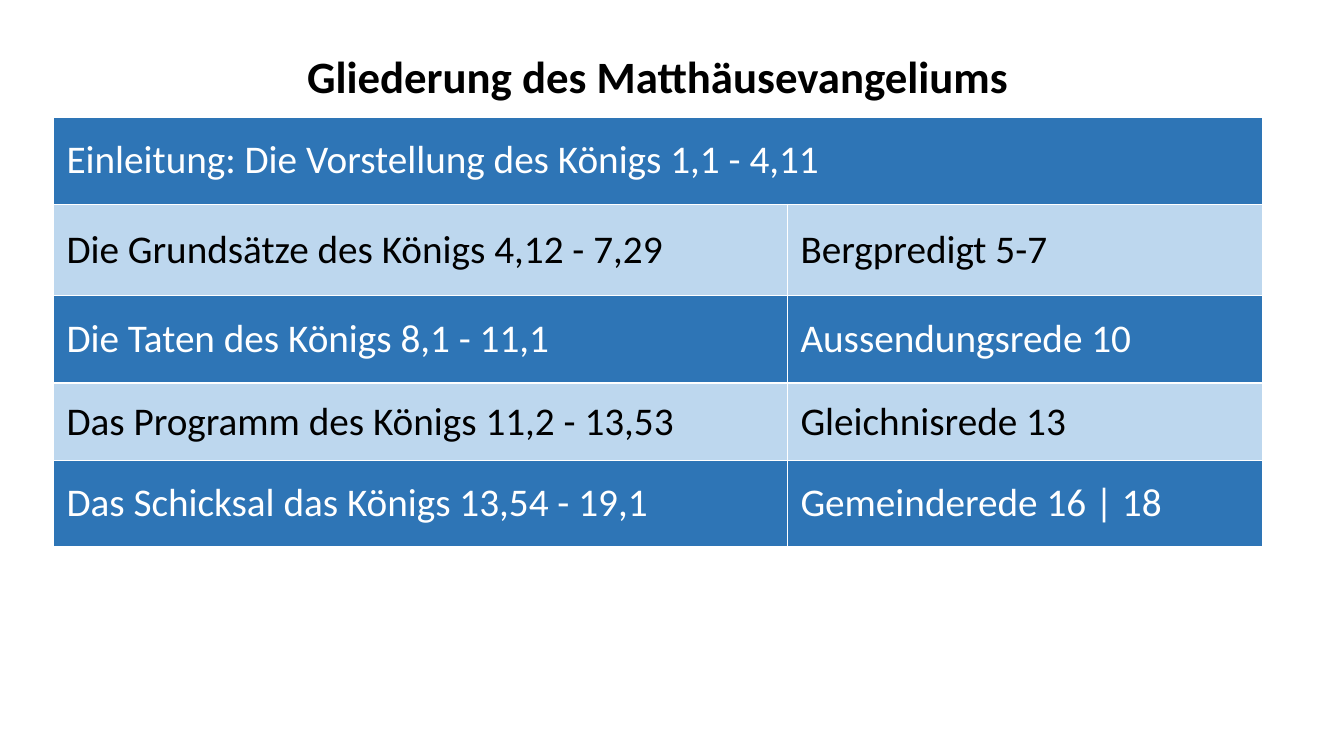
"""Build a slide with the outline of the Gospel of Matthew as a table."""
import pptx
import pptx.dml.color
import pptx.enum.text
import pptx.oxml
import pptx.oxml.ns
import pptx.util

TITLE = "Gliederung des Matthäusevangeliums"
SECTIONS = [
    ("Einleitung: Die Vorstellung des Königs 1,1 - 4,11",),
    ("Die Grundsätze des Königs 4,12 - 7,29", "Bergpredigt 5-7"),
    ("Die Taten des Königs 8,1 - 11,1", "Aussendungsrede 10"),
    ("Das Programm des Königs 11,2 - 13,53", "Gleichnisrede 13"),
    ("Das Schicksal das Königs 13,54 - 19,1", "Gemeinderede 16 | 18"),
]
COLORS = {"white": "FFFFFF", "black": "000000", "dark": "2E75B6", "light": "BDD7EE"}
SLIDE_SIZE = (13.33, 7.5)
TABLE_LEFT, TABLE_TOP = 0.53, 0.41
COLUMN_WIDTHS = [7.28, 4.71]
ROW_HEIGHTS = [0.74, 0.88, 0.9, 0.87, 0.77, 0.85]
ALIGN = pptx.enum.text.PP_ALIGN
TITLE_STYLE = {"fill": "white", "ink": "black", "align": ALIGN.CENTER,
               "font": {"size": pptx.util.Pt(32), "bold": True}}
BAND_STYLES = [
    {"fill": fill, "ink": ink, "align": ALIGN.LEFT,
     "font": {"size": pptx.util.Pt(28), "bold": False}}
    for fill, ink in (("dark", "white"), ("light", "black"))
]
CELL_FORMAT = {
    "margin_left": pptx.util.Inches(0.13),
    "margin_right": pptx.util.Inches(0.13),
    "margin_top": 0,
    "margin_bottom": 0,
    "vertical_anchor": pptx.enum.text.MSO_ANCHOR.MIDDLE,
}


def rgb(name):
    return pptx.dml.color.RGBColor.from_string(COLORS[name])


def set_format(target, values):
    for name, value in values.items():
        setattr(target, name, value)


def add_borders(cell, bottom_width):
    namespace = pptx.oxml.ns.nsdecls("a")
    for side, points in (("L", 1), ("R", 1), ("T", 1), ("B", bottom_width)):
        cell._tc.get_or_add_tcPr().append(pptx.oxml.parse_xml(
            f'<a:ln{side} {namespace} w="{pptx.util.Pt(points)}"><a:solidFill>'
            f'<a:srgbClr val="{COLORS["white"]}"/></a:solidFill></a:ln{side}>'))


def format_cell(cell, style, bottom_width):
    set_format(cell, CELL_FORMAT)
    add_borders(cell, bottom_width)
    cell.fill.solid()
    cell.fill.fore_color.rgb = rgb(style["fill"])


def write_cell(cell, text, style):
    para = cell.text_frame.paragraphs[0]
    para.alignment = style["align"]
    span = para.add_run()
    span.text = text
    set_format(span.font, {"name": "Calibri", **style["font"]})
    span.font.color.rgb = rgb(style["ink"])


def main():
    deck = pptx.Presentation()
    deck.slide_width, deck.slide_height = map(pptx.util.Inches, SLIDE_SIZE)
    page = deck.slides.add_slide(deck.slide_layouts[6])
    rows = [(TITLE,), *SECTIONS]
    frame = page.shapes.add_table(
        len(rows), len(COLUMN_WIDTHS),
        *map(pptx.util.Inches,
             (TABLE_LEFT, TABLE_TOP, sum(COLUMN_WIDTHS), sum(ROW_HEIGHTS))))
    table = frame.table
    for column, width in zip(table.columns, COLUMN_WIDTHS):
        column.width = pptx.util.Inches(width)
    for index, (row, height, texts) in enumerate(zip(table.rows, ROW_HEIGHTS, rows)):
        row.height = pptx.util.Inches(height)
        style = BAND_STYLES[(index - 1) % 2] if index else TITLE_STYLE
        cells = list(row.cells)
        for cell in cells:
            format_cell(cell, style, 1 if index else 3)
        if len(texts) == 1:
            cells[0].merge(cells[-1])
        for cell, text in zip(cells, texts):
            write_cell(cell, text, style)
    deck.save("out.pptx")


if __name__ == "__main__":
    main()
